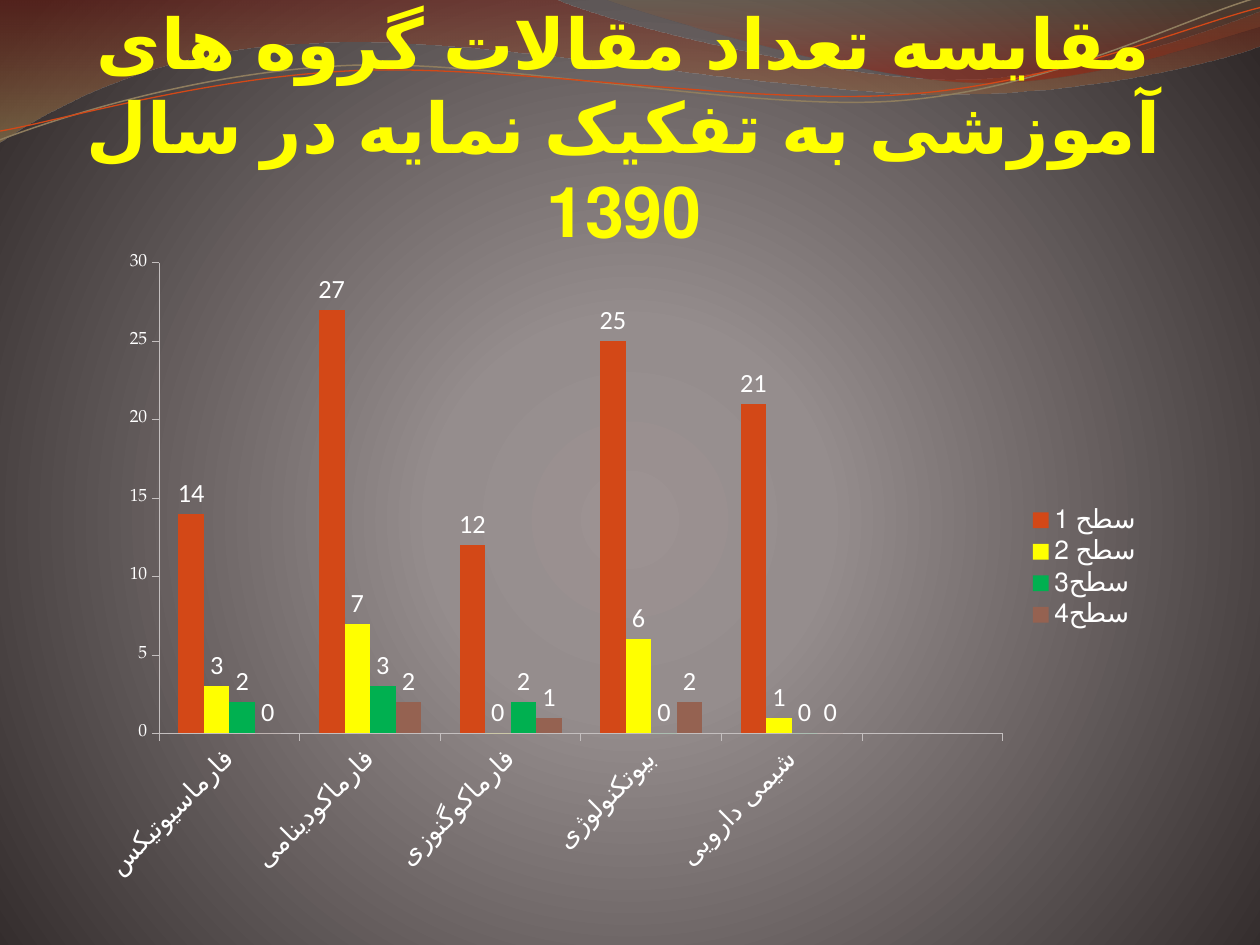
from lxml.etree import SubElement
from pptx import Presentation
from pptx.chart.data import CategoryChartData
from pptx.dml.color import RGBColor
from pptx.enum.chart import XL_CHART_TYPE as ChartType
from pptx.enum.chart import XL_LABEL_POSITION as LabelPosition
from pptx.enum.chart import XL_LEGEND_POSITION as LegendPosition
from pptx.enum.chart import XL_TICK_MARK as TickMark
from pptx.enum.text import MSO_ANCHOR as Anchor
from pptx.enum.text import PP_ALIGN as Align
from pptx.oxml import parse_xml
from pptx.oxml.ns import nsdecls, qn
from pptx.util import Pt

WHITE = RGBColor(0xFF, 0xFF, 0xFF)
YELLOW = RGBColor(0xFF, 0xFF, 0x00)
ORANGE = RGBColor(0xD3, 0x48, 0x17)
GREEN = RGBColor(0x00, 0xB0, 0x50)
BROWN = RGBColor(0x95, 0x62, 0x51)
TAN = RGBColor(0x8F, 0x7D, 0x5E)
AXIS_GREY = RGBColor(0xC4, 0xBF, 0xBF)
DARK_RED = RGBColor(0x7C, 0x1A, 0x0E)
SAND = RGBColor(0xA1, 0x85, 0x52)
OLIVE = RGBColor(0x7E, 0x6B, 0x48)
RED = RGBColor(0x9F, 0x17, 0x05)
LIGHT_GREY = RGBColor(0x9C, 0x92, 0x92)
MID_GREY = RGBColor(0x95, 0x8D, 0x8D)
NEAR_BLACK = RGBColor(0x30, 0x29, 0x29)

TITLE_LINES = ["مقایسه تعداد مقالات گروه های", "آموزشی به تفکیک نمایه در سال", "1390"]
# The last slot of the category axis is left free.
GROUPS = ["فارماسیوتیکس", "فارماکودینامی", "فارماکوگنوزی", "بیوتکنولوژی", "شیمی دارویی", ""]
LEVELS = [
    ("سطح 1", [14, 27, 12, 25, 21, None], ORANGE),
    ("سطح 2", [3, 7, 0, 6, 1, None], YELLOW),
    ("سطح3", [2, 3, 2, 0, 0, None], GREEN),
    ("سطح4", [0, 2, 1, 2, 0, None], BROWN),
]
LABEL_FONT = {"name": "Calibri", "size": Pt(15)}
NUMBER_FONT = {"name": "TeX Gyre Pagella", "size": Pt(10)}
CHART_WIDTH, CHART_HEIGHT = Pt(612), Pt(372.2)

DOWNWARD = '<a:lin ang="5400000" scaled="0"/>'
RADIAL = ('<a:path path="circle">'
          '<a:fillToRect l="10000" t="110000" r="10000" b="100000"/></a:path>')

# Outlines in points: a pair is a straight step, six numbers are a Bézier curve.
LEFT_WAVE = [
    (0, 0), (316.8, -0.7),
    (342.7, 12.2, 478.1, 45.4, 545.8, 45.4), (614.2, 45.4, 689.8, 18.7, 720, 6.5),
    (720.7, 25.9),
    (707.8, 31.7, 626.4, 54.7, 537.1, 54), (447.8, 54, 275, 20.2, 185, 24.5),
    (92.9, 25.9, 33.1, 59.8, -0.7, 81.4),
]
RIGHT_WAVE = [
    (344.9, -0.7),
    (366.5, 7.9, 491, 44.6, 553.7, 46.8), (616.3, 49.7, 691.9, 23, 720, 15.1),
    (720, 0),
]
TAN_STRAND = [
    (0, 79.9), (34.6, 67, 113.8, 41, 199.4, 37.4),
    (284.4, 33.8, 427, 64.1, 513.4, 57.6), (599.8, 51.1, 675.4, 10.8, 718.6, -1.4),
]
ORANGE_STRAND = [
    (0, 74.9), (33.8, 69.1, 118.1, 43.9, 203.8, 40.3),
    (290.2, 36.7, 429.8, 60.5, 516.2, 54), (601.9, 48.2, 677.5, 15.1, 720, 4.3),
]


def apply_format(target, values):
    for name, value in values.items():
        setattr(target, name, value)


def format_font(font, values, color=WHITE):
    apply_format(font, values)
    font.color.rgb = color


def set_gradient(fill, holder, stops, direction):
    """Fill with (position %, colour, opacity %) stops; holder is the parent XML."""
    fill.solid()
    stop_xml = "".join(
        f'<a:gs pos="{position * 1000}"><a:srgbClr val="{color}">'
        f'<a:alpha val="{opacity * 1000}"/></a:srgbClr></a:gs>'
        for position, color, opacity in stops)
    gradient = parse_xml(f'<a:gradFill {nsdecls("a")} rotWithShape="1">'
                         f'<a:gsLst>{stop_xml}</a:gsLst>{direction}</a:gradFill>')
    holder.replace(holder.find(qn("a:solidFill")), gradient)


def add_outline(slide, outline, close):
    """Draw through all points, then turn each curve's three steps into one Bézier."""
    points = [(Pt(x), Pt(y)) for segment in outline
              for x, y in zip(segment[::2], segment[1::2])]
    builder = slide.shapes.build_freeform(*points[0])
    builder.add_line_segments(points[1:], close=close)
    shape = builder.convert_to_shape()
    shape.shadow.inherit = False

    steps = iter(shape.element.xpath(".//a:lnTo"))
    for segment in outline[1:]:
        first = next(steps)
        if len(segment) == 6:
            curve = parse_xml(f'<a:cubicBezTo {nsdecls("a")}/>')
            first.addprevious(curve)
            for step in (first, next(steps), next(steps)):
                curve.append(step[0])
                step.getparent().remove(step)
    return shape


def add_wave(slide, outline, stops):
    shape = add_outline(slide, outline, close=True)
    shape.line.fill.background()
    set_gradient(shape.fill, shape.element.spPr, stops, DOWNWARD)


def add_strand(slide, outline, color, width):
    shape = add_outline(slide, outline, close=False)
    shape.fill.background()
    shape.line.color.rgb = color
    shape.line.width = Pt(width)


def add_title(slide):
    box = slide.shapes.add_textbox(Pt(48), Pt(0), Pt(618.5), Pt(144))
    frame = box.text_frame
    apply_format(frame, {
        "word_wrap": True, "vertical_anchor": Anchor.BOTTOM, "margin_left": Pt(0),
        "margin_top": Pt(0), "margin_right": Pt(1.4), "margin_bottom": Pt(0)})
    paragraph = frame.paragraphs[0]
    paragraph.alignment = Align.CENTER
    paragraph._p.get_or_add_pPr().set("rtl", "1")
    paragraph.text = "\v".join(TITLE_LINES)
    for run in paragraph.runs:
        format_font(run.font, {"name": "Calibri", "size": Pt(40), "bold": True}, YELLOW)
        run._r.get_or_add_rPr().set("lang", "fa-IR")
    for line_break in paragraph._p.findall(qn("a:br")):
        SubElement(line_break, qn("a:rPr")).set("sz", "4000")


def format_axis(axis, font_values):
    apply_format(axis, {"has_major_gridlines": False,
                        "major_tick_mark": TickMark.OUTSIDE})
    axis.format.line.color.rgb = AXIS_GREY
    axis.format.line.width = Pt(0.5)
    format_font(axis.tick_labels.font, font_values)


def set_plot_layout(chart, left, top, width, height):
    """Place the inner plot area within the chart."""
    plot_area = chart._chartSpace.chart.plotArea
    layout = plot_area.find(qn("c:layout"))
    if layout is None:
        layout = parse_xml(f'<c:layout {nsdecls("c")}/>')
        plot_area.insert(0, layout)
    manual = SubElement(layout, qn("c:manualLayout"))
    settings = {"layoutTarget": "inner", "xMode": "edge", "yMode": "edge",
                "x": left / CHART_WIDTH, "y": top / CHART_HEIGHT,
                "w": width / CHART_WIDTH, "h": height / CHART_HEIGHT}
    for name, value in settings.items():
        SubElement(manual, qn(f"c:{name}")).set("val", str(value))


def add_level_chart(slide):
    data = CategoryChartData()
    data.categories = GROUPS
    for name, values, _ in LEVELS:
        data.add_series(name, values)
    chart = slide.shapes.add_chart(ChartType.COLUMN_CLUSTERED, Pt(48), Pt(138.2),
                                   CHART_WIDTH, CHART_HEIGHT, data).chart
    for free_slot in chart._chartSpace.xpath('.//c:cat//c:pt[@idx="5"]'):
        free_slot.getparent().remove(free_slot)
    apply_format(chart, {"has_title": False, "has_legend": True})
    format_font(chart.font, NUMBER_FONT)
    apply_format(chart.legend, {"position": LegendPosition.RIGHT,
                                "include_in_layout": False})
    format_font(chart.legend.font, LABEL_FONT)

    format_axis(chart.category_axis, LABEL_FONT)
    text_body = chart.category_axis._element.find(qn("c:txPr"))
    text_body.find(qn("a:bodyPr")).set("rot", "-2700000")
    format_axis(chart.value_axis, NUMBER_FONT)
    apply_format(chart.value_axis, {"minimum_scale": 0, "maximum_scale": 30,
                                    "major_unit": 5})

    plot = chart.plots[0]
    apply_format(plot, {"gap_width": 150, "overlap": 0, "vary_by_categories": False})
    for series, (_, _, color) in zip(plot.series, LEVELS):
        series.format.fill.solid()
        series.format.fill.fore_color.rgb = color
        labels = series.data_labels
        apply_format(labels, {"show_value": True, "position": LabelPosition.OUTSIDE_END})
        format_font(labels.font, LABEL_FONT)
    set_plot_layout(chart, Pt(43), Pt(12), Pt(482), Pt(269))


def main():
    presentation = Presentation()
    presentation.slide_width, presentation.slide_height = Pt(720), Pt(540)
    slide = presentation.slides.add_slide(presentation.slide_layouts[6])
    background = slide.background.fill
    background.solid()
    set_gradient(background, slide.element.xpath(".//p:bgPr")[0],
                 [(0, LIGHT_GREY, 100), (25, MID_GREY, 100), (100, NEAR_BLACK, 100)],
                 RADIAL)
    add_wave(slide, LEFT_WAVE, [(0, DARK_RED, 45), (100, SAND, 55)])
    add_wave(slide, RIGHT_WAVE, [(0, OLIVE, 30), (80, RED, 45)])
    add_strand(slide, TAN_STRAND, TAN, 0.85)
    add_strand(slide, ORANGE_STRAND, ORANGE, 0.75)
    add_title(slide)
    add_level_chart(slide)
    presentation.save("out.pptx")


if __name__ == "__main__":
    main()
